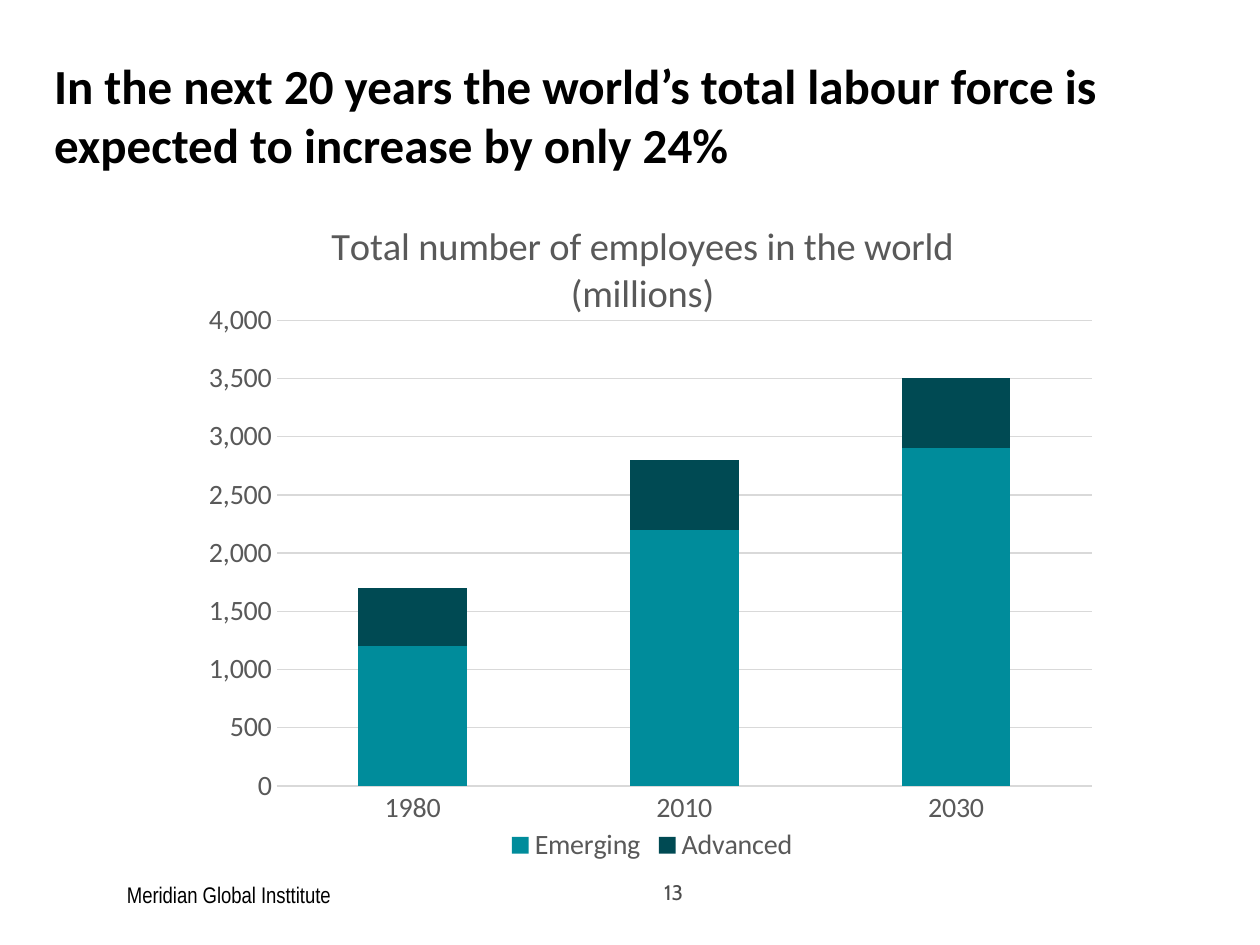
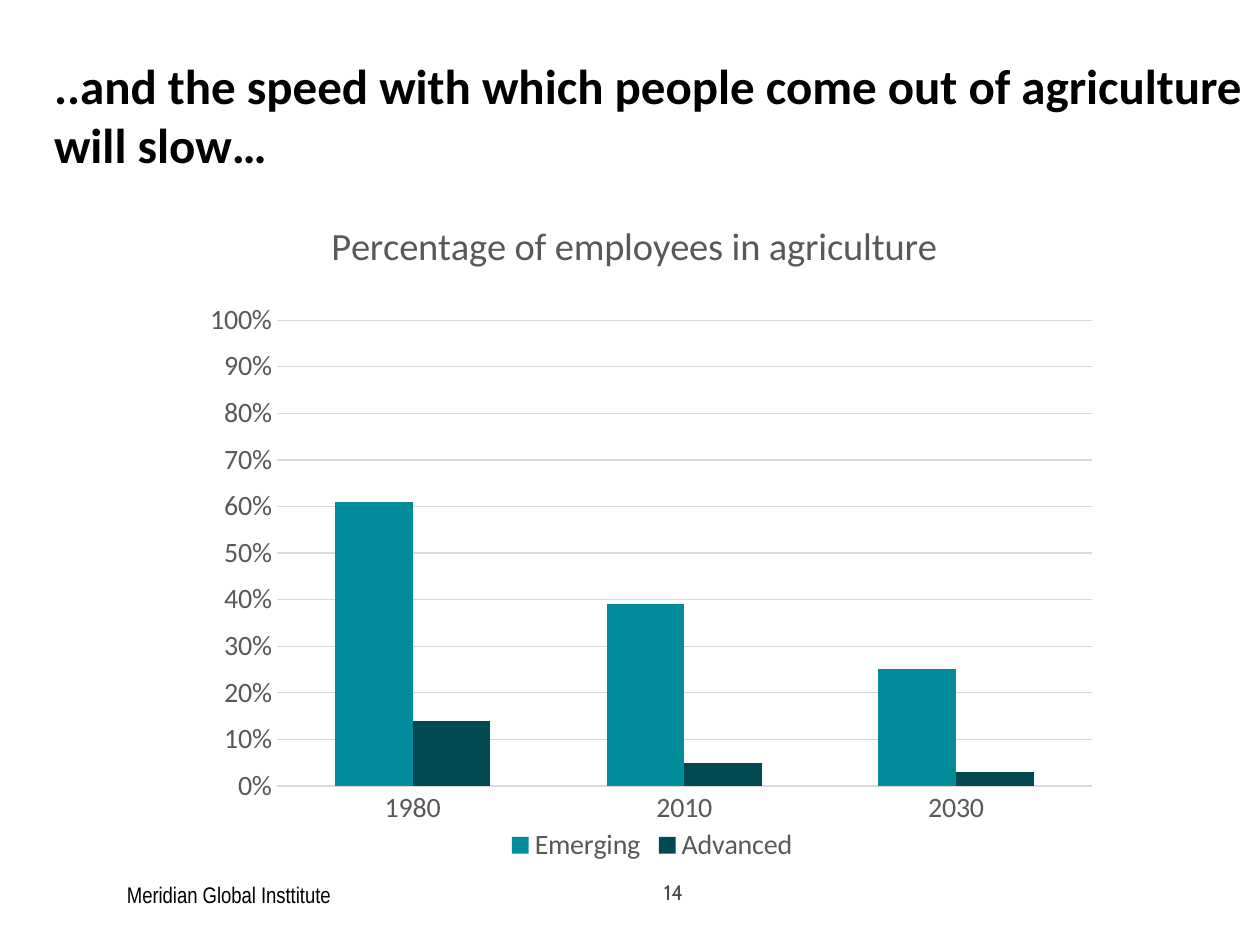
from dataclasses import dataclass

from lxml.etree import SubElement
from pptx import Presentation
from pptx.chart.data import CategoryChartData
from pptx.dml.color import RGBColor
from pptx.enum.chart import XL_CHART_TYPE, XL_LEGEND_POSITION, XL_TICK_MARK
from pptx.enum.text import MSO_ANCHOR, MSO_AUTO_SIZE, PP_ALIGN
from pptx.oxml import parse_xml
from pptx.oxml.ns import nsdecls, qn
from pptx.util import Cm, Pt


@dataclass(frozen=True)
class Theme:
    black: str = "000000"
    number_grey: str = "4D4D4D"
    chart_grey: str = "595959"
    grid_grey: str = "D9D9D9"
    series_colors: tuple = ("008C9B", "004A53")
    text_font: str = "Calibri"
    footer_font: str = "Arial Narrow"
    number_font: str = "Cabin"
    title_size: float = 28
    chart_title_size: float = 22
    chart_size: float = 16
    footer_size: float = 12.9
    number_size: float = 12
    line_width: float = 0.75


THEME = Theme()
YEARS = ("1980", "2010", "2030")
FOOTER = "Meridian Global Insttitute"
FIRST_NUMBER = 13


def format_font(font, size, color, name=THEME.text_font, bold=False):
    font.size = Pt(size)
    font.name = name
    font.bold = bold
    font.color.rgb = RGBColor.from_string(color)


def write(frame, text, align=PP_ALIGN.LEFT, **style):
    para = frame.paragraphs[0]
    para.alignment = align
    span = para.add_run()
    span.text = text
    format_font(span.font, **style)


def place(shape, left, top, width, height):
    shape.left, shape.top = Cm(left), Cm(top)
    shape.width, shape.height = Cm(width), Cm(height)


def set_layout(element, index, **settings):
    for old_layout in element.findall(qn("c:layout")):
        element.remove(old_layout)
    layout = parse_xml(f"<c:layout {nsdecls('c')}><c:manualLayout/></c:layout>")
    for tag, value in settings.items():
        SubElement(layout[0], qn(f"c:{tag}")).set("val", str(value))
    element.insert(index, layout)


class SlideBuilder:
    def __init__(self, deck, theme):
        self.deck = deck
        self.theme = theme
        self.page = None

    def start_page(self, title, number):
        theme = self.theme
        self.page = self.deck.slides.add_slide(self.deck.slide_layouts[5])
        self.add_title(title)
        self.add_text(str(number), (11.28, 17.63, 2.74, 0.69), MSO_ANCHOR.MIDDLE,
                      align=PP_ALIGN.RIGHT, size=theme.number_size,
                      color=theme.number_grey, name=theme.number_font)
        self.add_text(FOOTER, (2.31, 17.63, 13.54, 0.81), size=theme.footer_size,
                      color=theme.black, name=theme.footer_font)

    def add_title(self, text):
        title = self.page.shapes.title
        place(title, 1.09, 1.12, 24.66, 1.63)
        frame = title.text_frame
        frame.margin_left = frame.margin_top = frame.margin_right = frame.margin_bottom = 0
        frame.vertical_anchor = MSO_ANCHOR.TOP
        frame.auto_size = MSO_AUTO_SIZE.NONE
        frame.word_wrap = True
        write(frame, text, size=self.theme.title_size, color=self.theme.black, bold=True)

    def add_text(self, text, area, anchor=MSO_ANCHOR.TOP, **style):
        box = self.page.shapes.add_textbox(*map(Cm, area))
        box.text_frame.word_wrap = True
        box.text_frame.vertical_anchor = anchor
        write(box.text_frame, text, **style)

    def add_column_chart(self, kind, title, series, number_format, maximum, step, overlap):
        theme = self.theme
        data = CategoryChartData(number_format=number_format)
        data.categories = YEARS
        for name, values in series.items():
            data.add_series(name, values)
        area = map(Cm, (3.71, 3.73, 18.87, 13.77))
        chart = self.page.shapes.add_chart(kind, *area, data).chart
        format_font(chart.font, theme.chart_size, theme.chart_grey)

        chart.has_title = True
        write(chart.chart_title.text_frame, title, align=PP_ALIGN.CENTER,
              size=theme.chart_title_size, color=theme.chart_grey)
        set_layout(chart.chart_title._element, 1, xMode="edge", yMode="edge", x=0.15, y=0.04)
        set_layout(chart._chartSpace.chart.plotArea, 0, layoutTarget="inner", xMode="edge",
                   yMode="edge", x=0.099, y=0.198, w=0.871, h=0.682)

        chart.has_legend = True
        chart.legend.position = XL_LEGEND_POSITION.BOTTOM
        chart.legend.include_in_layout = False
        format_font(chart.legend.font, theme.chart_size, theme.chart_grey)
        self.format_axes(chart, number_format, maximum, step)

        plot = chart.plots[0]
        plot.gap_width = 150
        plot.overlap = overlap
        plot.vary_by_categories = False
        for column, color in zip(plot.series, theme.series_colors):
            column.format.fill.solid()
            column.format.fill.fore_color.rgb = RGBColor.from_string(color)

    def format_axes(self, chart, number_format, maximum, step):
        theme = self.theme
        for axis in (chart.category_axis, chart.value_axis):
            axis.major_tick_mark = axis.minor_tick_mark = XL_TICK_MARK.NONE
            format_font(axis.tick_labels.font, theme.chart_size, theme.chart_grey)
        scale = chart.value_axis
        scale.minimum_scale, scale.maximum_scale, scale.major_unit = 0, maximum, step
        scale.tick_labels.number_format = number_format
        scale.tick_labels.number_format_is_linked = False
        scale.format.line.fill.background()
        for line in (chart.category_axis.format.line, scale.major_gridlines.format.line):
            line.color.rgb = RGBColor.from_string(theme.grid_grey)
            line.width = Pt(theme.line_width)


PAGES = (
    ("In the next 20 years the world’s total labour force is expected to increase by only 24%",
     dict(kind=XL_CHART_TYPE.COLUMN_STACKED,
          title="Total number of employees in the world (millions)",
          series={"Emerging": (1200, 2200, 2900), "Advanced": (500, 600, 600)},
          number_format="#,##0", maximum=4000, step=500, overlap=100)),
    ("..and the speed with which people come out of agriculture will slow…",
     dict(kind=XL_CHART_TYPE.COLUMN_CLUSTERED,
          title="Percentage of employees in agriculture",
          series={"Emerging": (0.61, 0.39, 0.25), "Advanced": (0.14, 0.05, 0.03)},
          number_format="0%", maximum=1, step=0.1, overlap=0)),
)


def main():
    deck = Presentation()
    deck.slide_width, deck.slide_height = Cm(25.4), Cm(19.05)
    builder = SlideBuilder(deck, THEME)
    for number, (title, chart) in enumerate(PAGES, FIRST_NUMBER):
        builder.start_page(title, number)
        builder.add_column_chart(**chart)
    deck.save("out.pptx")


if __name__ == "__main__":
    main()
